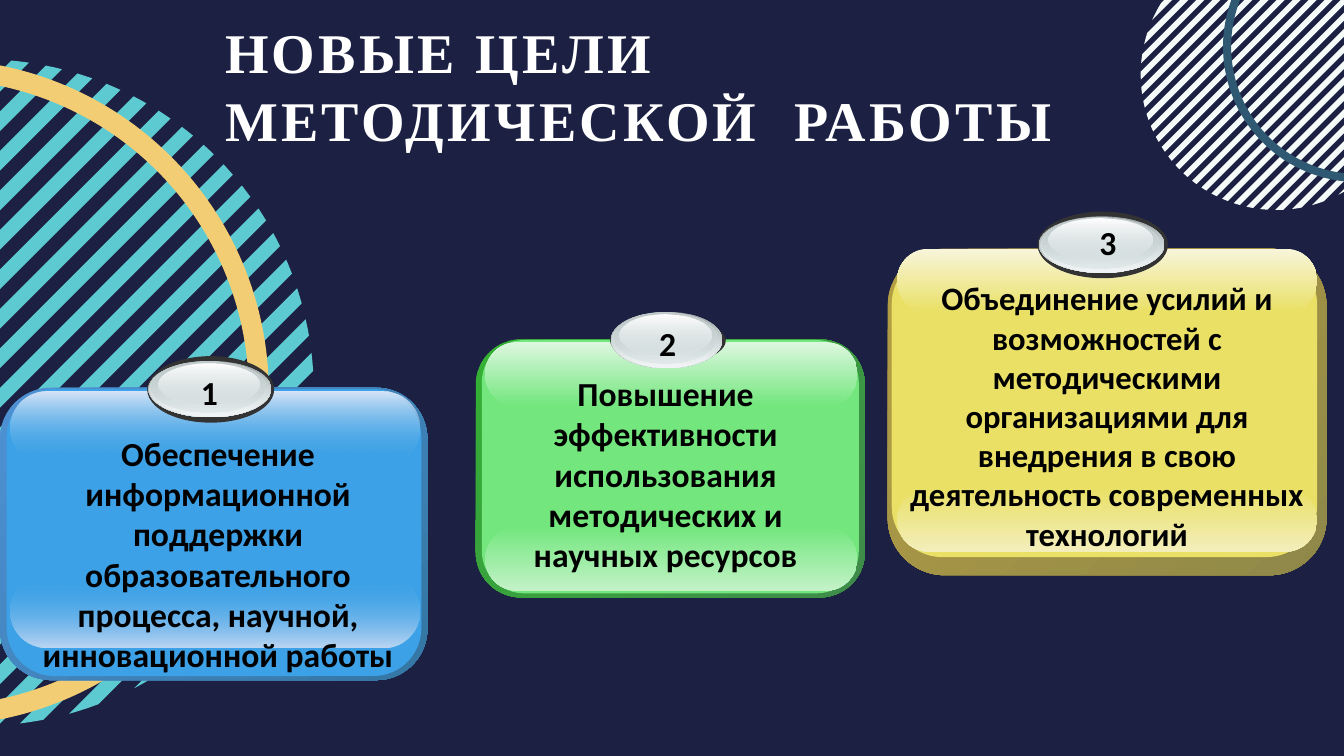
"""Build a slide with three numbered goal cards between two striped discs."""
from math import sqrt

from lxml import etree
from pptx import Presentation
from pptx.dml.color import RGBColor
from pptx.enum.shapes import MSO_SHAPE
from pptx.enum.text import PP_ALIGN
from pptx.oxml.ns import qn
from pptx.util import Inches, Pt

ROUND, OVAL, DONUT = MSO_SHAPE.ROUNDED_RECTANGLE, MSO_SHAPE.OVAL, MSO_SHAPE.DONUT
CENTER, LEFT = PP_ALIGN.CENTER, PP_ALIGN.LEFT

WIDE, HIGH = 20, 11.25
NAVY, BLACK, WHITE, RIM = "1C2143", "000000", "FFFFFF", "333333"
UNIT = 1000
STRIPES, FIRST, STEP = 24, -1.377, 0.1185

DISCS = [
    dict(mid=(-0.29, 5.84), r=4.96, color="5DCAD1", ring=(-5.92, 0.88), ink="F3CD74"),
    dict(mid=(18.99, 1.11), r=2.015, color="F5FBF9", ring=(18.2, -1.32), ink="2F5972"),
]
TITLE = [["НОВЫЕ ЦЕЛИ"], ["МЕТОДИЧЕСКОЙ", " ", "РАБОТЫ"]]
TIGHT, GAP = 3.6, 22
CARDS = [
    dict(
        text="Обеспечение информационной поддержки образовательного процесса, "
             "научной, инновационной работы",
        size=36, area=(0.22, 6.39, 6.05, 3.74), digit=(2.64, 5.48),
        base=(0, 5.77, 6.36, 4.35), edge=("4E91D4", "3477A4"),
        body=(0.1, 5.79, 6.17, 4.27), fill="3CA1E6",
        gloss=(0.15, 6.09, 1.08), low=(8.56, "BDD6F3"), top=(5.82, "D7E5F7"), fade=0,
        rim=(2.19, 5.3, 1.89, 0.99), face=(2.21, 5.37, 1.83, 0.84)),
    dict(
        text="Повышение эффективности использования методических и научных ресурсов",
        size=36, area=(7.4, 5.5, 5.01, 3.13), digit=(9.46, 4.75),
        base=(7.08, 5.05, 5.79, 3.84), edge=("34B034", "3F8B4A"),
        body=(7.17, 5.06, 5.61, 3.77), fill="73E77E",
        gloss=(7.22, 5.54, 0.95), low=(7.84, "C3F2C7"), top=(5.09, "DDF7DF"), fade=100,
        rim=(9.08, 4.72, 1.72, 0.7), face=(9.09, 4.64, 1.66, 0.84)),
    dict(
        text="Объединение усилий и возможностей с методическими организациями "
             "для внедрения в свою деятельность современных технологий",
        size=35, area=(13.21, 4.09, 6.53, 4.34), digit=(16.01, 3.25),
        base=(13.21, 3.7, 6.53, 4.86), edge=("B59F43", "8F8849"),
        body=(13.27, 3.77, 6.33, 4.52), fill="E9E065",
        gloss=(13.35, 6.25, 0.95), low=(7.26, "F3EEBB"), top=(3.7, "F8F5DB"), fade=100,
        rim=(15.44, 3.15, 1.94, 0.99), face=(15.46, 3.22, 1.87, 0.84)),
]
LAYERS = [
    ((0, 0, 1, 1), ("99A1A2", "D6E1E2"), (100, 100)),
    ((0.01, 0.01, 0.98, 0.98), ("D6E1E2", "F2F5F5"), (0, 100)),
    ((0.02, 0.02, 0.93, 0.9), ("C1CBCC", "D6E1E2"), (100, 48)),
    ((0.08, 0.04, 0.825, 0.74), ("FFFFFF", "D6E1E2"), (100, 38)),
]


def rgb(code):
    return RGBColor.from_string(code)


def paint(shape, color):
    shape.shadow.inherit = False
    shape.line.fill.background()
    shape.fill.solid()
    shape.fill.fore_color.rgb = rgb(color)


def blend(shape, colors, angle=90, alphas=(100, 100)):
    shape.fill.gradient()
    shape.fill.gradient_angle = 360 - angle
    for stop, color in zip(shape.fill.gradient_stops, colors):
        stop.color.rgb = rgb(color)
    for node, alpha in zip(shape._element.spPr.iter(qn("a:srgbClr")), alphas):
        if alpha < 100:
            etree.SubElement(node, qn("a:alpha")).set("val", str(alpha * 1000))


def draw(slide, kind, box, color, adj=None):
    shape = slide.shapes.add_shape(kind, *map(Inches, box))
    paint(shape, color)
    if adj is not None:
        shape.adjustments[0] = adj
    return shape


def write(slide, box, lines, size, font, color, align=CENTER, inset=(0.1, 0.05)):
    frame = slide.shapes.add_textbox(*map(Inches, box)).text_frame
    frame.word_wrap = True
    frame.margin_left = frame.margin_right = Inches(inset[0])
    frame.margin_top = frame.margin_bottom = Inches(inset[1])
    para = frame.paragraphs[0]
    para.alignment = align
    for row, line in enumerate(lines):
        if row:
            para.add_line_break()
        for part in line:
            run = para.add_run()
            run.text = part
            run.font.size, run.font.name, run.font.bold = Pt(size), font, True
            run.font.color.rgb = rgb(color)
    return para


def stripe(mid, r, start):
    """Return the outline of one diagonal band cut by the circle."""
    sides = [], []
    for k in range(7):
        d = (start + STEP / 2 * k / 6) / 2
        h = sqrt(0.5 - d * d)
        for side, sign in zip(sides, (1, -1)):
            x, y = mid[0] + r * (d + sign * h), mid[1] + r * (d - sign * h)
            side.append((x * UNIT, y * UNIT))
    return sides[0] + sides[1][::-1]


def add_disc(slide, disc):
    bands = [stripe(disc["mid"], disc["r"], FIRST + STEP * i) for i in range(STRIPES)]
    pen = slide.shapes.build_freeform(*bands[0][0], scale=Inches(1) / UNIT)
    for i, band in enumerate(bands):
        if i:
            pen.move_to(*band[0])
        pen.add_line_segments(band[1:], close=True)
    paint(pen.convert_to_shape(), disc["color"])
    size = 2 * disc["r"]
    draw(slide, DONUT, (*disc["ring"], size, size), disc["ink"], 0.03)


def add_card(slide, num, card):
    fill, fade = card["fill"], card["fade"]
    blend(draw(slide, ROUND, card["base"], fill, 0.175), card["edge"], 45)
    draw(slide, ROUND, card["body"], fill, 0.167)
    x, w, h = card["gloss"]
    (low, pale), (top, light) = card["low"], card["top"]
    for y, colors, alphas in ((low, (fill, pale), (fade, 100)),
                              (top, (light, fill), (100, fade))):
        blend(draw(slide, ROUND, (x, y, w, h), fill, 0.5), colors, 90, alphas)
    draw(slide, OVAL, card["rim"], RIM)
    x, y, w, h = card["face"]
    for (dx, dy, sw, sh), colors, alphas in LAYERS:
        box = x + dx * w, y + dy * h, sw * w, sh * h
        blend(draw(slide, OVAL, box, WHITE), colors, 90, alphas)
    write(slide, (*card["digit"], 0.95, 0.71), [[str(num)]], 36, "Calibri", BLACK)
    write(slide, card["area"], [[card["text"]]], card["size"], "Calibri", BLACK)


def main():
    deck = Presentation()
    deck.slide_width, deck.slide_height = Inches(WIDE), Inches(HIGH)
    slide = deck.slides.add_slide(deck.slide_layouts[6])
    slide.background.fill.solid()
    slide.background.fill.fore_color.rgb = rgb(NAVY)
    for disc in DISCS:
        add_disc(slide, disc)
    para = write(slide, (3.35, 0.25, WIDE - 3.35, 2.02), TITLE, 60,
                 "Times New Roman", WHITE, LEFT, (0, 0))
    para.line_spacing = Pt(72.7)
    for run in para.runs:
        space = GAP if run.text == " " else TIGHT
        run.font._element.set("spc", str(round(space * 100)))
    for num, card in enumerate(CARDS, 1):
        add_card(slide, num, card)
    deck.save("out.pptx")


if __name__ == "__main__":
    main()
